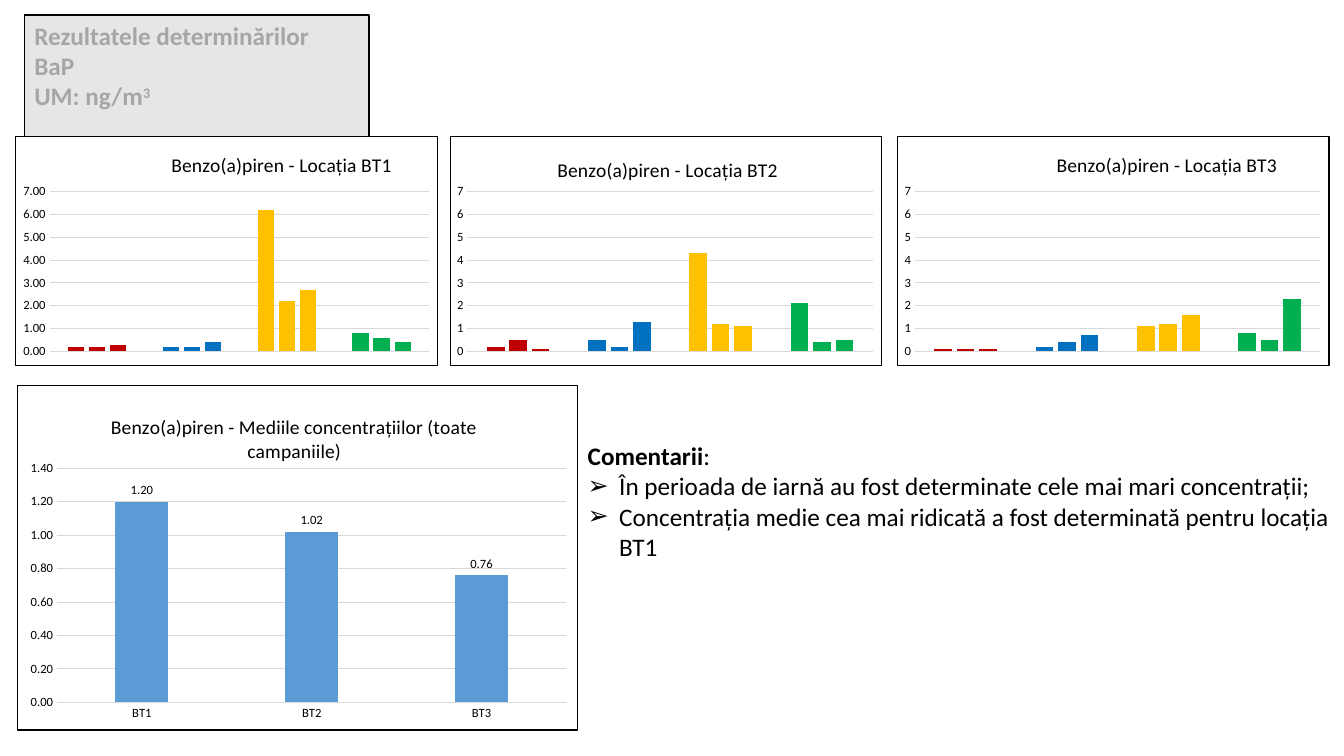
"""Build the slide of benzo(a)pyrene results: four column charts and comments."""
from dataclasses import dataclass
from typing import Any

from pptx import Presentation
from pptx.chart.data import CategoryChartData
from pptx.dml.color import RGBColor
from pptx.enum.chart import XL_CHART_TYPE, XL_LABEL_POSITION, XL_TICK_MARK
from pptx.enum.text import MSO_ANCHOR, MSO_AUTO_SIZE, PP_ALIGN
from pptx.oxml import parse_xml
from pptx.oxml.ns import nsdecls, qn
from pptx.util import Pt

BLACK = RGBColor(0x00, 0x00, 0x00)
PALE = RGBColor(0xE7, 0xE6, 0xE6)
MUTED = RGBColor(0xA6, 0xA6, 0xA6)
GRID = RGBColor(0xD9, 0xD9, 0xD9)
SHADES = (RGBColor(0x5B, 0x9B, 0xD5), RGBColor(0xED, 0x7D, 0x31), RGBColor(0xA5, 0xA5, 0xA5))
TINTS = (RGBColor(0xC0, 0x00, 0x00), RGBColor(0x00, 0x70, 0xC0),
         RGBColor(0xFF, 0xC0, 0x00), RGBColor(0x00, 0xB0, 0x50))
FACE = "Calibri"
BODY = {"name": FACE, "size": Pt(18), "bold": False}
HEAD = {"name": FACE, "size": Pt(18), "bold": True}
SMALL = {"name": FACE, "size": Pt(9), "bold": False}
TITLE = {"name": FACE, "size": Pt(14), "bold": False}
FRAME = {"word_wrap": True, "auto_size": MSO_AUTO_SIZE.SHAPE_TO_FIT_TEXT,
         "vertical_anchor": MSO_ANCHOR.TOP, "margin_left": Pt(7.2), "margin_right": Pt(7.2),
         "margin_top": Pt(3.6), "margin_bottom": Pt(3.6)}
PARA = {"alignment": PP_ALIGN.LEFT, "space_before": Pt(0), "space_after": Pt(0), "line_spacing": 1.0}
SEASONS = ("1", "2", "3", "4")
SITES = ("BT1", "BT2", "BT3")
NOTES = ("În perioada de iarnă au fost determinate cele mai mari concentrații;",
         "Concentrația medie cea mai ridicată a fost determinată pentru locația BT1")


@dataclass(frozen=True)
class Panel:
    """A column chart; head and plot are fractions of its size."""
    title: str
    box: tuple[float, ...]
    head: tuple[float, ...]
    plot: tuple[float, ...]
    cats: tuple[str, ...]
    rows: tuple[tuple[float, ...], ...]
    top: float = 7
    step: float = 1
    code: str = "General"
    mean: bool = False


PANELS = (
    Panel("Benzo(a)piren - Locația BT1", (10.8, 97.2, 302.4, 164.2), (0.36, 0.05),
          (0.08, 0.24, 0.9, 0.7), SEASONS,
          ((0.2, 0.2, 6.2, 0.8), (0.2, 0.2, 2.2, 0.6), (0.3, 0.4, 2.7, 0.4)), code="0.00"),
    Panel("Benzo(a)piren - Locația BT2", (321.1, 97.2, 308.9, 164.2), (0.24, 0.07),
          (0.04, 0.24, 0.94, 0.7), SEASONS,
          ((0.2, 0.5, 4.3, 2.1), (0.5, 0.2, 1.2, 0.4), (0.1, 1.3, 1.1, 0.5))),
    Panel("Benzo(a)piren - Locația BT3", (640.8, 97.2, 308.9, 164.2), (0.36, 0.05),
          (0.04, 0.24, 0.94, 0.7), SEASONS,
          ((0.1, 0.2, 1.1, 0.8), (0.1, 0.4, 1.2, 0.5), (0.1, 0.7, 1.6, 2.3))),
    Panel("Benzo(a)piren - Mediile concentrațiilor (toate campaniile)",
          (12.2, 275, 401, 247), (0.16, 0.07), (0.07, 0.24, 0.91, 0.68), SITES,
          ((1.2, 1.02, 0.76),), 1.4, 0.2, "0.00", True),
)


def apply(item: Any, form: dict[str, Any]) -> None:
    """Set each attribute named in the format."""
    for key, value in form.items():
        setattr(item, key, value)


def ink(font: Any, form: dict[str, Any], tone: RGBColor = BLACK) -> None:
    """Format a font and colour it."""
    apply(font, form)
    font.color.rgb = tone


def paint(item: Any, tone: RGBColor) -> None:
    """Give a solid fill."""
    item.fill.solid()
    item.fill.fore_color.rgb = tone


def stroke(line: Any, tone: RGBColor, width: float) -> None:
    """Give a line its colour and width."""
    line.color.rgb = tone
    line.width = Pt(width)


def place(item: Any, box: tuple[float, ...]) -> None:
    """Move and size a shape."""
    apply(item, dict(zip(("left", "top", "width", "height"), map(Pt, box))))


def layout(node: Any, parts: tuple[float, ...], inner: bool = False) -> None:
    """Fix the place of a chart part."""
    for old in node.findall(qn("c:layout")):
        node.remove(old)
    target = '<c:layoutTarget val="inner"/>' if inner else ""
    modes = "".join(f'<c:{key}Mode val="edge"/>' for key in "xy")
    sizes = "".join(f'<c:{key} val="{part}"/>' for key, part in zip("xywh", parts))
    spot = parse_xml(f'<c:layout {nsdecls("c")}><c:manualLayout>{target}{modes}{sizes}'
                     '</c:manualLayout></c:layout>')
    node.insert(0 if inner else 1, spot)


def border(chart: Any) -> None:
    """Give the chart a white ground and a black edge."""
    look = parse_xml(f'<c:spPr {nsdecls("c", "a")}><a:solidFill><a:srgbClr val="FFFFFF"/></a:solidFill>'
                     f'<a:ln w="{Pt(1)}"><a:solidFill><a:srgbClr val="{BLACK}"/></a:solidFill></a:ln></c:spPr>')
    chart._chartSpace.find(qn("c:chart")).addnext(look)


def axes(chart: Any, panel: Panel) -> None:
    """Format both axes."""
    side, base = chart.value_axis, chart.category_axis
    for axis in (side, base):
        apply(axis, {"major_tick_mark": XL_TICK_MARK.NONE, "minor_tick_mark": XL_TICK_MARK.NONE})
        ink(axis.tick_labels.font, SMALL)
    apply(side, {"minimum_scale": 0, "maximum_scale": panel.top,
                 "major_unit": panel.step, "has_major_gridlines": True})
    apply(side.tick_labels, {"number_format": panel.code, "number_format_is_linked": False})
    stroke(side.major_gridlines.format.line, GRID, 0.75)
    side.format.line.fill.background()
    stroke(base.format.line, GRID, 0.75)
    base.visible = panel.mean


def draw(slide: Any, panel: Panel) -> None:
    """Add one column chart."""
    data = CategoryChartData()
    data.categories = panel.cats
    for num, row in enumerate(panel.rows, 1):
        data.add_series(f"Series {num}", row)
    chart = slide.shapes.add_chart(XL_CHART_TYPE.COLUMN_CLUSTERED, *map(Pt, panel.box), data).chart
    ink(chart.font, {"name": FACE, "size": Pt(10)})
    apply(chart, {"has_legend": False, "has_title": True})
    text = chart.chart_title.text_frame
    text.text = panel.title
    ink(text.paragraphs[0].runs[0].font, TITLE)
    layout(chart.chart_title._element, panel.head)
    layout(chart._chartSpace.chart.plotArea, panel.plot, True)
    border(chart)
    axes(chart, panel)
    plot = chart.plots[0]
    apply(plot, {"gap_width": 219, "overlap": -27, "vary_by_categories": False})
    for bars, shade in zip(plot.series, SHADES):
        bars.invert_if_negative = False
        paint(bars.format, shade)
        for spot, tint in enumerate(() if panel.mean else TINTS):
            paint(bars.points[spot].format, tint)
    if panel.mean:
        plot.has_data_labels = True
        tags = plot.data_labels
        apply(tags, {"show_value": True, "number_format": panel.code, "number_format_is_linked": False,
                     "position": XL_LABEL_POSITION.OUTSIDE_END})
        ink(tags.font, SMALL)


def write(para: Any, text: str, form: dict[str, Any], tone: RGBColor = BLACK) -> Any:
    """Add a run to a paragraph and return its font."""
    apply(para, PARA)
    run = para.add_run()
    run.text = text
    ink(run.font, form, tone)
    return run.font


def bullet(para: Any, mark: str = "") -> None:
    """Set a hanging bullet, or none."""
    props = para._p.get_or_add_pPr()
    dent = Pt(22.5) if mark else 0
    props.set("marL", str(dent))
    props.set("indent", str(-dent))
    tag = f'<a:buChar {nsdecls("a")} char="{mark}"/>' if mark else f'<a:buNone {nsdecls("a")}/>'
    props.append(parse_xml(tag))


def main() -> None:
    """Build and save the deck."""
    deck = Presentation()
    apply(deck, {"slide_width": Pt(960), "slide_height": Pt(540)})
    slide = deck.slides.add_slide(deck.slide_layouts[1])
    title, body = slide.placeholders
    place(title, (17.3, 10.8, 246.2, 72.7))
    place(body, (412.6, 311, 547.2, 94.3))
    for item in (title, body):
        apply(item.text_frame, FRAME)
    paint(title, PALE)
    stroke(title.line, BLACK, 1)
    frame = title.text_frame
    para = frame.paragraphs[0]
    write(para, "Rezultatele determinărilor", HEAD, MUTED)
    for text in ("BaP", "UM: ng/m"):
        para = frame.add_paragraph()
        write(para, text, HEAD, MUTED)
    power = write(para, "3", HEAD, MUTED)
    power._element.set("baseline", "30000")
    para = body.text_frame.paragraphs[0]
    write(para, "Comentarii", HEAD)
    write(para, ":", BODY)
    bullet(para)
    for note in NOTES:
        para = body.text_frame.add_paragraph()
        write(para, note, BODY)
        bullet(para, "➢")
    for panel in PANELS:
        draw(slide, panel)
    deck.save("out.pptx")


if __name__ == "__main__":
    main()
